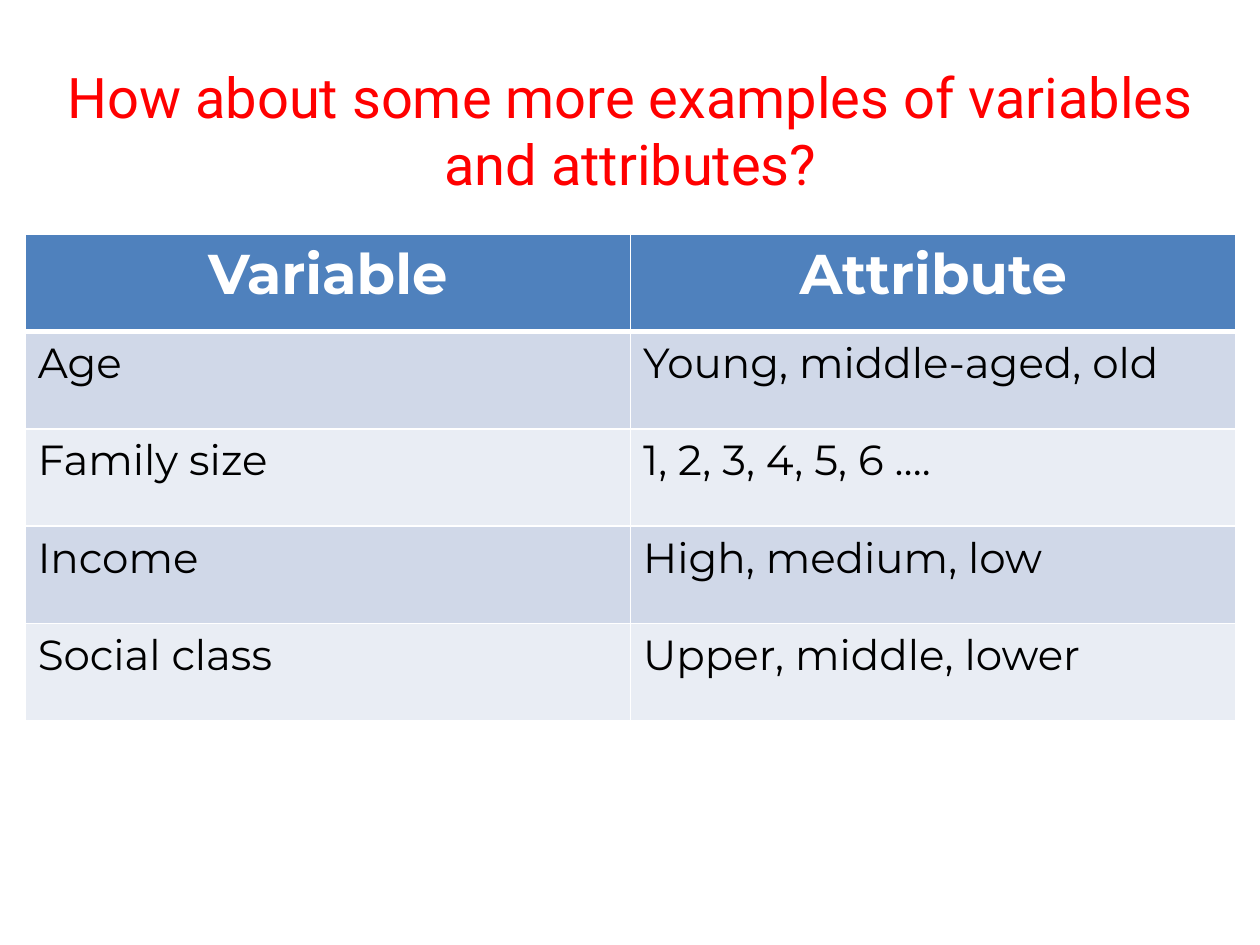
from lxml.etree import SubElement
from pptx import Presentation
from pptx.dml.color import RGBColor
from pptx.enum.text import MSO_ANCHOR, PP_ALIGN
from pptx.oxml.ns import qn
from pptx.util import Inches, Pt

COLORS = {
    "title": "FF0000",
    "header": "4F81BD",
    "band_dark": "D0D8E8",
    "band_light": "E9EDF4",
    "white": "FFFFFF",
    "black": "000000",
}
ROWS = [
    ("Variable", "Attribute"),
    ("Age", "Young, middle-aged, old"),
    ("Family size", "1, 2, 3, 4, 5, 6 …."),
    ("Income", "High, medium, low"),
    ("Social class", "Upper, middle, lower"),
]


def rgb(name):
    return RGBColor.from_string(COLORS[name])


def add_run(p, text, font, size, color, bold=False):
    r = p.add_run()
    r.text = text
    r.font.name = font
    r.font.size = Pt(size)
    r.font.bold = bold
    r.font.color.rgb = rgb(color)


def set_borders(cell, widths):
    """Draw white borders; widths maps L, R, T, B to points, in that order."""
    tcPr = cell._tc.get_or_add_tcPr()
    for side, width in widths.items():
        ln = SubElement(tcPr, qn(f"a:ln{side}"), w=str(Pt(width)))
        fill = SubElement(ln, qn("a:solidFill"))
        SubElement(fill, qn("a:srgbClr"), val=COLORS["white"])


def add_title(slide, left, top, width, height):
    tf = slide.shapes.add_textbox(left, top, width, height).text_frame
    tf.word_wrap = True
    tf.vertical_anchor = MSO_ANCHOR.MIDDLE
    p = tf.paragraphs[0]
    p.alignment = PP_ALIGN.CENTER
    add_run(p, "How about some more examples of variables and attributes?",
            "Roboto", 32, "title")


def add_examples_table(slide, left, top, width, height):
    table = slide.shapes.add_table(len(ROWS), len(ROWS[0]),
                                   left, top, width, height).table
    for i, row in enumerate(ROWS):
        header = i == 0
        band = "header" if header else ("band_light", "band_dark")[i % 2]
        for j, text in enumerate(row):
            cell = table.cell(i, j)
            set_borders(cell, {"L": 1, "R": 1, "T": 3 if i == 1 else 1,
                               "B": 3 if header else 1})
            cell.fill.solid()
            cell.fill.fore_color.rgb = rgb(band)
            p = cell.text_frame.paragraphs[0]
            if header:
                p.alignment = PP_ALIGN.CENTER
            add_run(p, text, "Montserrat", 32 if header else 24,
                    "white" if header else "black", header)


def main():
    prs = Presentation()
    prs.slide_width, prs.slide_height = Inches(10), Inches(7.5)
    s = prs.slides.add_slide(prs.slide_layouts[6])
    left, width = Inches(0.2), Inches(9.61)
    add_examples_table(s, left, Inches(1.86), width, Inches(3.86))
    add_title(s, left, Inches(0.44), width, Inches(1.18))
    prs.save("out.pptx")


if __name__ == "__main__":
    main()
